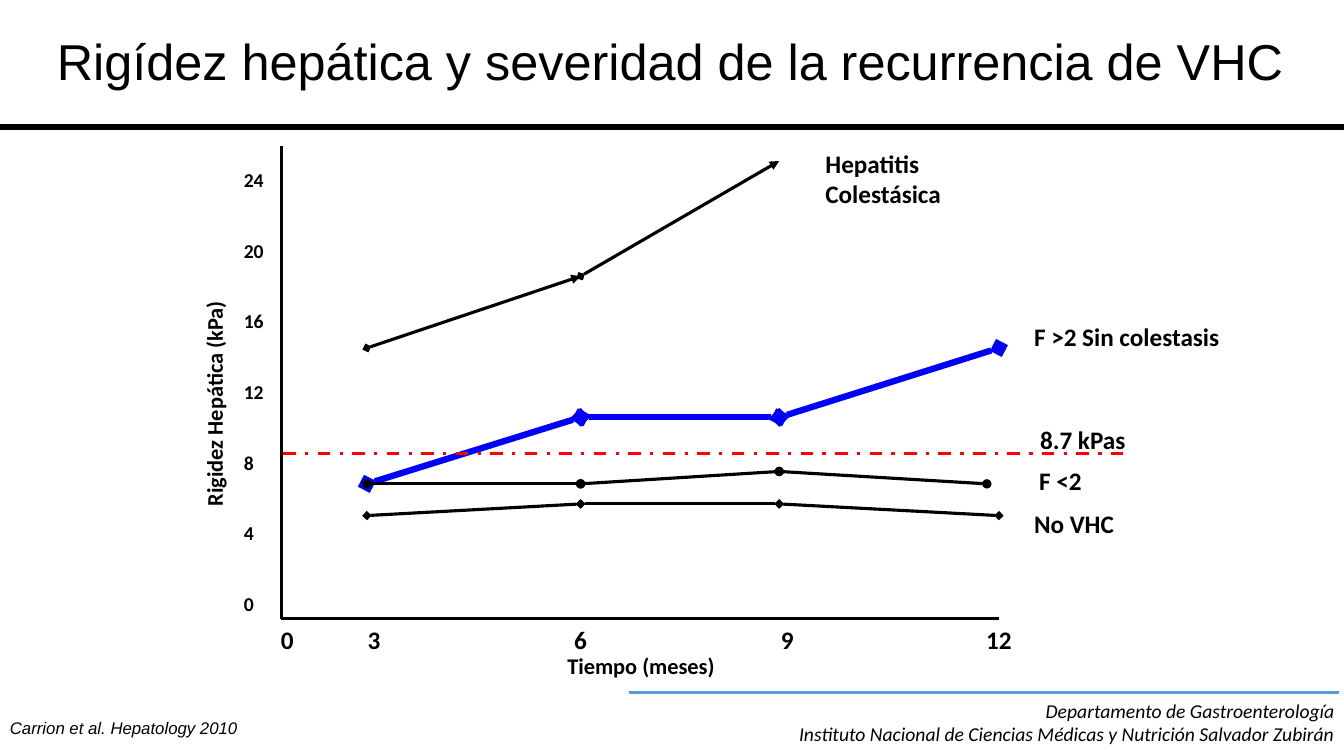
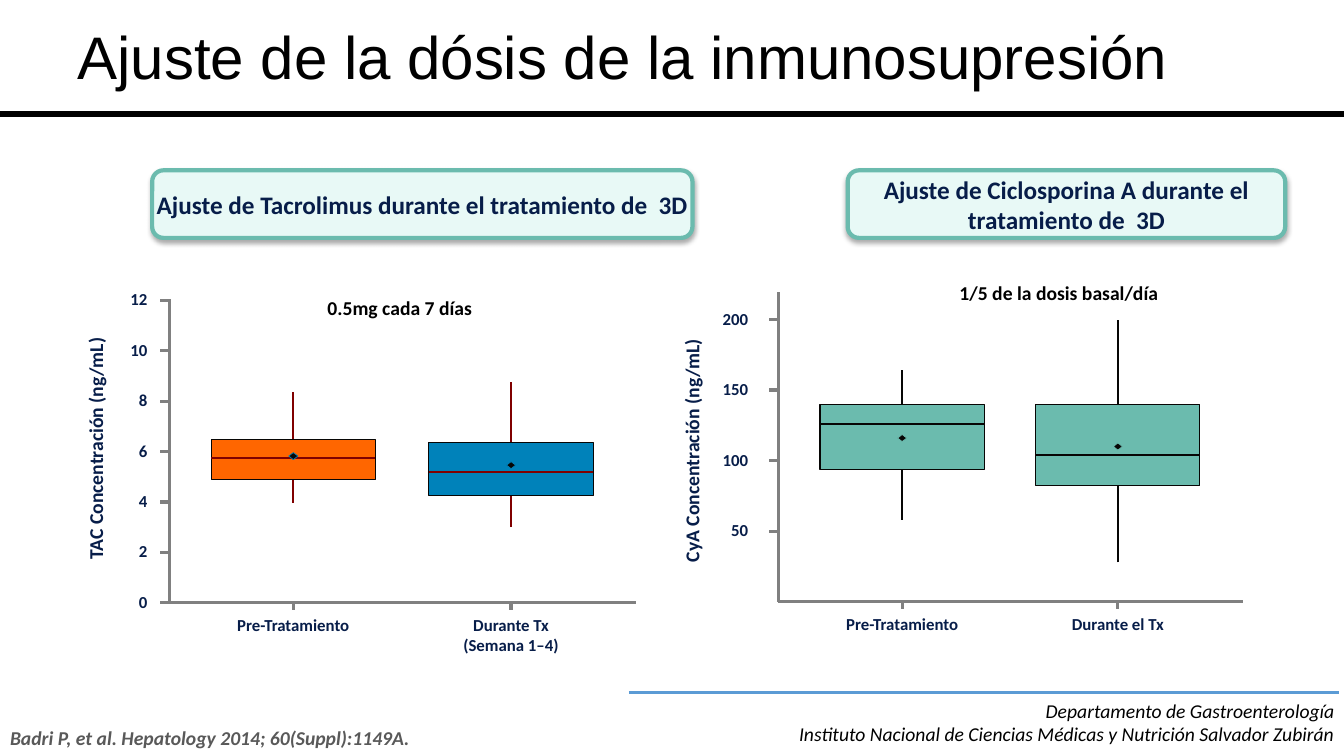
from dataclasses import dataclass
from typing import Iterable, NamedTuple, Optional

from lxml.etree import SubElement
from pptx import Presentation
from pptx.dml.color import RGBColor
from pptx.enum.dml import MSO_LINE
from pptx.enum.shapes import MSO_CONNECTOR, MSO_SHAPE
from pptx.enum.text import MSO_ANCHOR, PP_ALIGN
from pptx.oxml.ns import qn
from pptx.util import Emu, Inches, Pt

CELL = Inches(0.1)
COLUMNS, ROWS = 133.33, 75

BLACK, NAVY, GREY = "000000", "071D49", "808080"
INK, TEAL, MINT, MAROON = "070605", "6BBBAE", "E8F9F6", "800000"
ORANGE, AZURE, BLUE, RED = "FF6600", "0082BA", "0000FF", "FF0000"
FOOTER_BLUE, CITATION_GREY = "5B9BD5", "595959"

LEFT, CENTER, RIGHT = PP_ALIGN.LEFT, PP_ALIGN.CENTER, PP_ALIGN.RIGHT


class Area(NamedTuple):
    column: float
    row: float
    columns: float
    rows: float


class Point(NamedTuple):
    column: float
    row: float


@dataclass(frozen=True)
class Label:
    text: str
    area: Area
    size: float
    color: str = BLACK
    align: PP_ALIGN = LEFT
    font: str = "Calibri"
    bold: bool = True
    italic: bool = False
    rotation: int = 0
    wrap: bool = False
    padded: bool = True
    anchor: MSO_ANCHOR = MSO_ANCHOR.TOP
    spacing: Optional[float] = None


@dataclass(frozen=True)
class Stroke:
    color: str
    width: float
    head: str = ""
    tail: str = ""
    dash: Optional[MSO_LINE] = None


@dataclass(frozen=True)
class Series:
    values: tuple[float, ...]
    stroke: Stroke
    last_column: float = 99.1


@dataclass(frozen=True)
class Distribution:
    name: str
    column: float
    low: float
    first_quartile: float
    median: float
    mean: float
    third_quartile: float
    high: float
    fill: str
    ink: str
    halo: str


@dataclass(frozen=True)
class Panel:
    heading: Label
    note: Label
    axis_title: Label
    axis: Point
    right: float
    base: float
    unit: float
    ticks: range
    tick_gap: float
    boxes: tuple[Distribution, ...]

    def row(self, value: float) -> float:
        return self.base - value * self.unit


AXIS = Stroke(BLACK, 2.25)
PANEL_AXIS = Stroke(GREY, 2.25)
HEADING_RULE = Stroke(BLACK, 4)
FOOTER_RULE = Stroke(FOOTER_BLUE, 1.5)
FOOTER = Label(
    "Departamento de Gastroenterología\n"
    "Instituto Nacional de Ciencias Médicas y Nutrición Salvador Zubirán",
    Area(77.3, 68.8, 56.1, 5.7), 14, align=RIGHT, bold=False, italic=True)

MONTH_COLUMNS = (36.4, 57.6, 77.3)
MONTH_LABELS = {0: 28.5, 3: 37.1, 6: 57.6, 9: 78.1, 12: 99.1}
ZERO_ROW, ROWS_PER_KPA = 59.9, 1.75
ARROW = Stroke(BLACK, 2.25, "diamond", "triangle")
THICK = Stroke(BLUE, 4.5, "diamond", "diamond")
ROUND = Stroke(BLACK, 2.25, "oval", "oval")
THIN = Stroke(BLACK, 2.25, "diamond", "diamond")
SERIES = (
    Series((14.5, 18.57, 25.1), ARROW),
    Series((6.8, 10.57, 10.57, 14.5), THICK),
    Series((6.8, 6.8, 7.5, 6.8), ROUND, 97.9),
    Series((5, 5.66, 5.66, 5), THIN),
)
STIFFNESS_LABELS = (
    Label("Carrion et al. Hepatology 2010", Area(0, 70.7, 25.3, 3), 12,
          font="Arial", bold=False, italic=True),
    Label("Rigidez Hepática (kPa)", Area(9.9, 38, 22.7, 3.7), 16, rotation=270),
    Label("Tiempo (meses)", Area(55.3, 64.2, 16.8, 3.7), 16),
    Label("Hepatitis\nColestásica", Area(80.9, 14.2, 13.7, 7.1), 18),
    Label("F >2 Sin colestasis", Area(101.6, 31.4, 20.7, 4), 18),
    Label("8.7 kPas", Area(102.2, 41.6, 10.6, 4), 18),
    Label("F <2", Area(102.1, 45.7, 6.3, 4), 18),
    Label("No VHC", Area(101.6, 49.9, 10, 4), 18),
)

BOX_COLUMNS = 16.3
PANELS = (
    Panel(
        Label("Ajuste de Tacrolimus durante el tratamiento de  3D",
              Area(15.1, 16.9, 53.6, 6.7), 18, NAVY),
        Label("0.5mg cada 7 días", Area(31.5, 28.9, 16.6, 3.4), 14),
        Label("TAC Concentración (ng/mL)", Area(-2.3, 42.4, 24.4, 4.2), 14,
              NAVY, CENTER, rotation=270),
        Point(16.8, 29.7), 63.1, 59.8, 2.5, range(0, 13, 2), 2.2,
        (Distribution("Pre-Tratamiento", 29.1, 3.96, 4.88, 5.76, 5.82, 6.48, 8.36,
                      ORANGE, MAROON, AZURE),
         Distribution("Durante Tx\n(Semana 1–4)", 50.7, 3, 4.24, 5.2, 5.46, 6.36, 8.76,
                      AZURE, MAROON, AZURE)),
    ),
    Panel(
        Label("Ajuste de Ciclosporina A durante el tratamiento de  3D",
              Area(84.1, 16.9, 43.4, 6.7), 18, NAVY),
        Label("1/5 de la dosis basal/día", Area(94.2, 27.4, 21.9, 3.4), 14),
        Label("CyA Concentración (ng/mL)", Area(56.9, 42.6, 24.3, 4.2), 14,
              NAVY, CENTER, rotation=270),
        Point(77.2, 29), 123.3, 59.7, 0.14, range(50, 201, 50), 3,
        (Distribution("Pre-Tratamiento", 89.5, 58, 94, 126, 116, 140, 164,
                      TEAL, INK, TEAL),
         Distribution("Durante el Tx", 110.9, 28, 82, 104, 110, 140, 200,
                      TEAL, INK, TEAL)),
    ),
)


def cells(count: float) -> Emu:
    return Emu(round(count * CELL))


def hex_color(value: str) -> RGBColor:
    return RGBColor.from_string(value)


def place(area: Area) -> list[Emu]:
    return [cells(length) for length in area]


def write(shape, label: Label) -> None:
    frame = shape.text_frame
    frame.word_wrap = label.wrap
    frame.vertical_anchor = label.anchor
    if not label.padded:
        frame.margin_left = frame.margin_right = 0
        frame.margin_top = frame.margin_bottom = 0
    for index, line in enumerate(label.text.split("\n")):
        para = frame.add_paragraph() if index else frame.paragraphs[0]
        para.text = line
        para.alignment = label.align
        para.line_spacing = label.spacing
        para.font.name = label.font
        para.font.size = Pt(label.size)
        para.font.bold = label.bold
        para.font.italic = label.italic
        para.font.color.rgb = hex_color(label.color)


def draw_label(page, label: Label) -> None:
    box = page.shapes.add_textbox(*place(label.area))
    box.rotation = label.rotation
    write(box, label)


def draw_line(page, start: Point, end: Point, stroke: Stroke) -> None:
    line = page.shapes.add_connector(
        MSO_CONNECTOR.STRAIGHT, *(cells(length) for length in (*start, *end)))
    line.line.color.rgb = hex_color(stroke.color)
    line.line.width = Pt(stroke.width)
    if stroke.dash:
        line.line.dash_style = stroke.dash
    properties = line._element.spPr
    outline = properties.find(qn("a:ln"))
    for tag, kind in (("a:headEnd", stroke.head), ("a:tailEnd", stroke.tail)):
        if kind:
            SubElement(outline, qn(tag), type=kind)
    SubElement(properties, qn("a:effectLst"))


def draw_shape(page, kind: MSO_SHAPE, area: Area, fill: str, stroke: Stroke):
    shape = page.shapes.add_shape(kind, *place(area))
    shape.shadow.inherit = False
    shape.fill.solid()
    shape.fill.fore_color.rgb = hex_color(fill)
    shape.line.color.rgb = hex_color(stroke.color)
    shape.line.width = Pt(stroke.width)
    return shape


def draw_heading_pill(page, label: Label) -> None:
    pill = draw_shape(page, MSO_SHAPE.ROUNDED_RECTANGLE, label.area, MINT, Stroke(TEAL, 3))
    effects = pill._element.spPr.find(qn("a:effectLst"))
    shadow = SubElement(effects, qn("a:outerShdw"), blurRad=str(Pt(3.5)),
                        dist=str(Pt(2.2)), dir="5400000", rotWithShape="0")
    color = SubElement(shadow, qn("a:srgbClr"), val=BLACK)
    SubElement(color, qn("a:alpha"), val="32000")
    write(pill, Label(label.text, label.area, label.size, label.color, CENTER,
                      wrap=True, padded=False, anchor=MSO_ANCHOR.MIDDLE))


def add_page(deck, title: Label, rule_row: float):
    page = deck.slides.add_slide(deck.slide_layouts[6])
    draw_label(page, title)
    draw_line(page, Point(0, rule_row), Point(COLUMNS, rule_row), HEADING_RULE)
    draw_line(page, Point(62.4, 68.7), Point(132.8, 68.7), FOOTER_RULE)
    draw_label(page, FOOTER)
    return page


def draw_series(page, series: Series) -> None:
    columns = (*MONTH_COLUMNS, series.last_column)
    points = [Point(column, ZERO_ROW - value * ROWS_PER_KPA)
              for column, value in zip(columns, series.values)]
    for start, end in zip(points, points[1:]):
        draw_line(page, start, end, series.stroke)


def draw_labels(page, labels: Iterable[Label]) -> None:
    for label in labels:
        draw_label(page, label)


def build_stiffness(deck) -> None:
    title = Label("Rigídez hepática y severidad de la recurrencia de VHC",
                  Area(0.8, 2.5, 131.4, 7.1), 36, align=CENTER, font="Arial",
                  bold=False, wrap=True)
    page = add_page(deck, title, 12.6)
    corner = Point(27.9, 61.4)
    draw_line(page, Point(27.9, 14.5), corner, AXIS)
    draw_line(page, corner, Point(99.1, 61.4), AXIS)
    for series in SERIES[:2]:
        draw_series(page, series)
    draw_line(page, Point(28.1, 45), Point(111.5, 45),
              Stroke(RED, 2.25, dash=MSO_LINE.DASH_DOT))
    for series in SERIES[2:]:
        draw_series(page, series)
    draw_labels(page, (Label(str(month), Area(column - 2.5, 61.4, 5, 4), 18, align=CENTER)
                       for month, column in MONTH_LABELS.items()))
    draw_labels(page, (Label(str(value),
                             Area(23.2, ZERO_ROW - value * ROWS_PER_KPA - 1.7, 4, 3.4),
                             14, wrap=True)
                       for value in range(0, 25, 4)))
    draw_labels(page, STIFFNESS_LABELS)


def draw_distribution(page, panel: Panel, box: Distribution) -> None:
    left, right = box.column - BOX_COLUMNS / 2, box.column + BOX_COLUMNS / 2
    top, median = panel.row(box.third_quartile), panel.row(box.median)
    ink = Stroke(box.ink, 1.5)
    draw_line(page, Point(box.column, panel.row(box.low)),
              Point(box.column, panel.row(box.high)), ink)
    draw_shape(page, MSO_SHAPE.RECTANGLE,
               Area(left, top, BOX_COLUMNS, panel.row(box.first_quartile) - top),
               box.fill, Stroke(INK, 0.75))
    draw_line(page, Point(left, median), Point(right, median), ink)
    draw_shape(page, MSO_SHAPE.DIAMOND,
               Area(box.column - 0.45, panel.row(box.mean) - 0.35, 0.9, 0.7),
               INK, Stroke(box.halo, 0.5))
    draw_line(page, Point(box.column, panel.base + 0.7),
              Point(box.column, panel.base), PANEL_AXIS)
    draw_label(page, Label(box.name, Area(box.column - 7, panel.base + 0.7, 14, 5),
                           12, NAVY, CENTER))


def draw_panel(page, panel: Panel) -> None:
    column = panel.axis.column
    draw_line(page, panel.axis, Point(column, panel.base), PANEL_AXIS)
    draw_line(page, Point(column, panel.base), Point(panel.right, panel.base), PANEL_AXIS)
    for value in panel.ticks:
        row = panel.row(value)
        draw_line(page, Point(column - 0.9, row), Point(column, row), PANEL_AXIS)
        draw_label(page, Label(str(value), Area(column - panel.tick_gap - 5, row - 1.6, 6, 3),
                               12, NAVY, RIGHT, wrap=True))
    for box in panel.boxes:
        draw_distribution(page, panel, box)
    draw_heading_pill(page, panel.heading)
    draw_labels(page, (panel.note, panel.axis_title))


def build_dosing(deck) -> None:
    title = Label("Ajuste de la dósis de la inmunosupresión", Area(6.7, 2.2, 120, 12.5),
                  42.9, font="Arial", bold=False, wrap=True, spacing=0.9)
    page = add_page(deck, title, 11.3)
    for panel in PANELS:
        draw_panel(page, panel)
    draw_label(page, Label("Badri P, et al. Hepatology 2014; 60(Suppl):1149A.",
                           Area(0.5, 72, 40.7, 2.4), 14, CITATION_GREY, CENTER,
                           italic=True, padded=False, anchor=MSO_ANCHOR.BOTTOM))


def main() -> None:
    deck = Presentation()
    deck.slide_width, deck.slide_height = cells(COLUMNS), cells(ROWS)
    build_stiffness(deck)
    build_dosing(deck)
    deck.save("out.pptx")


if __name__ == "__main__":
    main()
